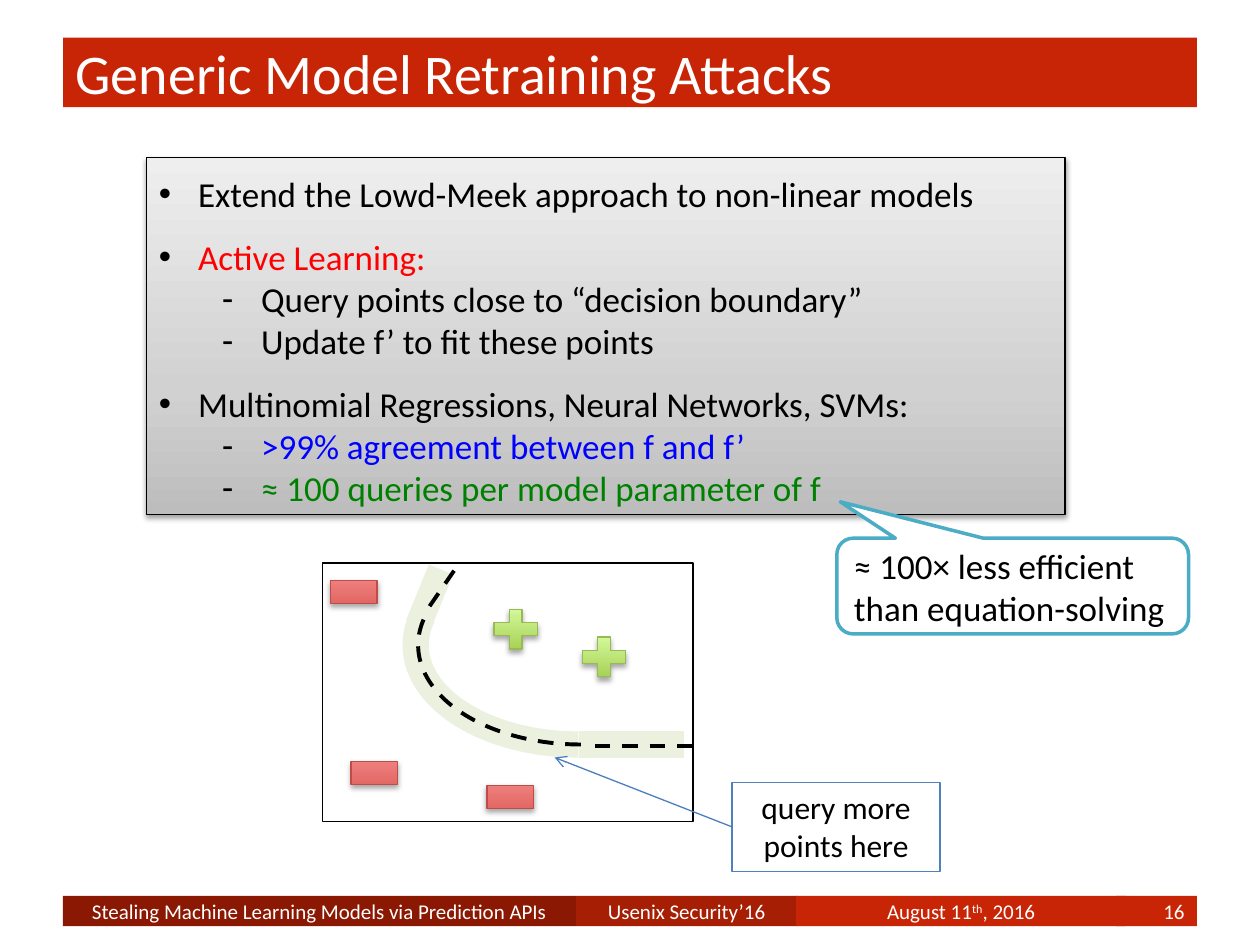
from lxml import etree
from pptx import Presentation
from pptx.dml.color import RGBColor
from pptx.enum.dml import MSO_LINE
from pptx.enum.shapes import MSO_CONNECTOR, MSO_SHAPE
from pptx.enum.text import MSO_ANCHOR, MSO_AUTO_SIZE, PP_ALIGN
from pptx.oxml.ns import qn
from pptx.util import Cm, Pt

RECTANGLE = MSO_SHAPE.RECTANGLE
CALLOUT = MSO_SHAPE.ROUNDED_RECTANGULAR_CALLOUT
ARC = MSO_SHAPE.ARC
PLUS = MSO_SHAPE.MATH_PLUS
MINUS = MSO_SHAPE.MATH_MINUS
STRAIGHT = MSO_CONNECTOR.STRAIGHT
DASH = MSO_LINE.DASH
LEFT, CENTER, RIGHT = PP_ALIGN.LEFT, PP_ALIGN.CENTER, PP_ALIGN.RIGHT
TOP, MIDDLE = MSO_ANCHOR.TOP, MSO_ANCHOR.MIDDLE
NO_FIT, GROW = MSO_AUTO_SIZE.NONE, MSO_AUTO_SIZE.SHAPE_TO_FIT_TEXT

RED, BLACK, WHITE, BAND = "C82506", "000000", "FFFFFF", "EBF1DE"


def color(value):
    return RGBColor.from_string(value)


def add_xml(parent, tag, **attributes):
    return etree.SubElement(parent, qn(tag), attributes)


class SlideBuilder:
    font_name = "Calibri"

    def __init__(self, page):
        self.page = page

    def place(self, box, left, top, width, height):
        box.left, box.top = Cm(left), Cm(top)
        box.width, box.height = Cm(width), Cm(height)

    def paint(self, box, fill=None, line=None, width=0.75, dash=None):
        if fill:
            box.fill.solid()
            box.fill.fore_color.rgb = color(fill)
        else:
            box.fill.background()
        self.stroke(box, line, width, dash)
        box.shadow.inherit = False

    def stroke(self, item, line, width, dash=None):
        if not line:
            item.line.fill.background()
            return
        item.line.color.rgb = color(line)
        item.line.width = Pt(width)
        if dash:
            item.line.dash_style = dash

    def shade(self, box, stops, opacity, distance):
        box.fill.gradient()
        box.fill.gradient_angle = 90
        stop_list = box.element.spPr.find(".//" + qn("a:gsLst"))
        for stop in list(stop_list):
            stop_list.remove(stop)
        for position, value in stops:
            stop = add_xml(stop_list, "a:gs", pos=str(position * 1000))
            add_xml(stop, "a:srgbClr", val=value)
        effects = box.element.spPr.find(qn("a:effectLst"))
        shadow = add_xml(effects, "a:outerShdw", blurRad=str(Pt(3.1)), dist=str(Pt(distance)),
                         dir="5400000", rotWithShape="0")
        tint = add_xml(shadow, "a:srgbClr", val=BLACK)
        add_xml(tint, "a:alpha", val=str(opacity * 1000))

    def style(self, para, size, value, align=LEFT):
        para.alignment = align
        para.font.name = self.font_name
        para.font.size = Pt(size)
        para.font.color.rgb = color(value)

    def title(self, text, *place):
        box = self.page.shapes.title
        self.place(box, *place)
        self.paint(box, RED)
        box.text_frame.text = text
        box.text_frame.auto_size = NO_FIT
        box.text_frame.vertical_anchor = MIDDLE
        self.style(box.text_frame.paragraphs[0], 32, WHITE)

    def bullets(self, items, *place):
        box = self.page.placeholders[1]
        self.place(box, *place)
        self.paint(box, WHITE, BLACK)
        self.shade(box, [(0, "BDBDBD"), (35, "D1D1D1"), (100, "EEEEEE")], 38, 1.6)
        frame = box.text_frame
        frame.auto_size = GROW
        frame.vertical_anchor = TOP
        frame.margin_top = frame.margin_bottom = Cm(0.3)
        for index, (level, text, value) in enumerate(items):
            para = frame.add_paragraph() if index else frame.paragraphs[0]
            para.text = text
            para.level = level
            para.space_before = Pt(12 if index and level == 0 else 0)
            properties = para._p.get_or_add_pPr()
            properties.set("marL", str(Cm(0.79 + 1.27 * level)))
            properties.set("indent", str(Cm(-0.79)))
            add_xml(add_xml(properties, "a:buClr"), "a:srgbClr", val=BLACK)
            add_xml(properties, "a:buFont", typeface="Arial")
            add_xml(properties, "a:buChar", char="•-"[level])
            self.style(para, 20, value)

    def shape(self, kind, *place, adjustments=(), **paint):
        box = self.page.shapes.add_shape(kind, *map(Cm, place))
        for index, value in enumerate(adjustments):
            box.adjustments[index] = value
        self.paint(box, **paint)
        return box

    def label(self, box, spans, size, value=BLACK, align=CENTER, anchor=MIDDLE):
        frame = box.text_frame
        frame.word_wrap = True
        frame.vertical_anchor = anchor
        para = frame.paragraphs[0]
        for index, text in enumerate(spans):
            span = para.add_run()
            span.text = text
            if index % 2:
                span._r.get_or_add_rPr().set("baseline", "30000")
        self.style(para, size, value, align)

    def sign(self, kind, left, top, width, height, line, stops):
        box = self.shape(kind, left, top, width, height, line=line)
        self.shade(box, stops, 35, 1.8)

    def line(self, start, end, value, width, dash=None, arrow=False):
        connector = self.page.shapes.add_connector(STRAIGHT, *map(Cm, start + end))
        self.stroke(connector, value, width, dash)
        if arrow:
            add_xml(connector.element.spPr.find(qn("a:ln")), "a:tailEnd", type="arrow")
        add_xml(connector.element.spPr, "a:effectLst")
        return connector


def main():
    deck = Presentation()
    deck.slide_width, deck.slide_height = Cm(25.4), Cm(19.05)
    builder = SlideBuilder(deck.slides.add_slide(deck.slide_layouts[1]))

    footers = [
        (11.61, 4.47, "A61E04", CENTER, ["Usenix Security’16"]),
        (16.05, 6.65, RED, CENTER, ["August 11", "th", ", 2016"]),
        (1.27, 10.34, "8A1803", CENTER, ["Stealing Machine Learning Models via Prediction APIs"]),
        (22.5, 1.63, RED, RIGHT, ["16"]),
    ]
    for left, width, fill, align, spans in footers:
        footer = builder.shape(RECTANGLE, left, 18.06, width, 0.61, fill=fill)
        builder.label(footer, spans, 12, WHITE, align)

    builder.title("Generic Model Retraining Attacks", 1.27, 0.76, 22.86, 1.4)
    builder.bullets([
        (0, "Extend the Lowd-Meek approach to non-linear models", BLACK),
        (0, "Active Learning:", "FF0000"),
        (1, "Query points close to “decision boundary”", BLACK),
        (1, "Update f’ to fit these points", BLACK),
        (0, "Multinomial Regressions, Neural Networks, SVMs:", BLACK),
        (1, ">99% agreement between f and f’", "0000FF"),
        (1, "≈ 100 queries per model parameter of f", "008000"),
    ], 2.95, 3.18, 18.52, 7.44)

    callout = builder.shape(CALLOUT, 16.87, 10.85, 7.09, 1.93, fill=WHITE, line="4BACC6",
                            width=2, adjustments=(-0.49, -0.88, 0.17))
    builder.label(callout, ["≈ 100× less efficient than equation-solving"], 20, align=LEFT)

    builder.shape(RECTANGLE, 6.5, 11.35, 7.47, 5.21, fill=WHITE, line=BLACK)
    boundaries = [
        (8.38, BAND, 15, None, (8.43, 12.6), (8.89, 11.48), (11.68, 15.01)),
        (8.43, BLACK, 2.25, DASH, (8.66, 12.22), (9.17, 11.48), (11.99, 15.04)),
    ]
    for left, value, width, dash, bend, upper, lower in boundaries:
        builder.shape(ARC, left, 11, 6.55, 4.01, line=value, width=width, dash=dash,
                      adjustments=(53.91, 114.07))
        builder.line(bend, upper, value, width, DASH)
        builder.line(lower, (13.97, lower[1]), value, width, DASH)

    for left, top in [(9.65, 15.09), (6.91, 14.61), (6.5, 10.95)]:
        builder.sign(MINUS, left, top, 1.27, 1.96, "BF4C48", [(0, "D1403C"), (100, "FFA6A5")])
    for left, top in [(9.8, 12.14), (11.58, 12.7)]:
        builder.sign(PLUS, left, top, 1.19, 1.09, "98B955", [(0, "A0CA4A"), (100, "DAFFA5")])

    query = builder.shape(RECTANGLE, 14.76, 15.77, 4.19, 1.8, line="4F81BD")
    builder.label(query, ["query more points here"], 18, anchor=TOP)
    pointer = builder.line((14.76, 16.67), (11.18, 15.27), "4B7EBC", 0.75, arrow=True)
    pointer.begin_connect(query, 1)

    deck.save("out.pptx")


if __name__ == "__main__":
    main()
